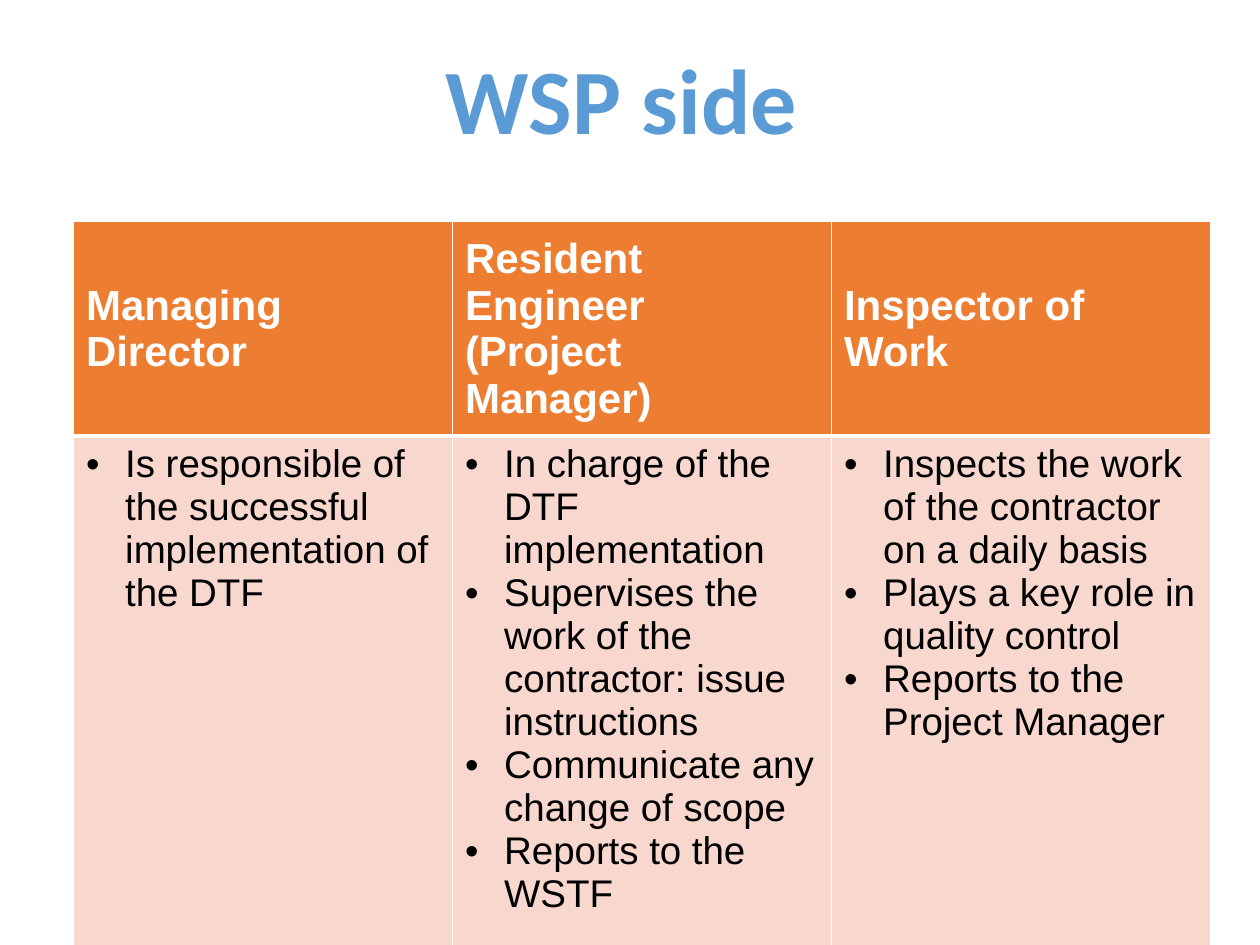
from dataclasses import dataclass

from lxml.etree import SubElement as Sub
from pptx import Presentation
from pptx.dml.color import RGBColor as Rgb
from pptx.enum.text import MSO_ANCHOR as Anchor, PP_ALIGN as Align
from pptx.oxml.ns import qn
from pptx.util import Cm, Pt


@dataclass(frozen=True)
class Theme:
    blue: str = "5B9BD5"
    orange: str = "ED7D31"
    pink: str = "F8D7CE"
    white: str = "FFFFFF"
    black: str = "000000"
    head: str = "Calibri"
    body: str = "Arial"
    big: float = 52.6
    mid: float = 24
    small: float = 22


class Deck:
    def __init__(self, theme):
        self.theme = theme
        self.prs = Presentation()
        self.prs.slide_width, self.prs.slide_height = Cm(25.4), Cm(19.05)
        self.slide = self.prs.slides.add_slide(self.prs.slide_layouts[6])

    def style(self, para, name, size, color, bold):
        font = para.font
        font.name, font.size, font.bold = name, Pt(size), bold
        font.color.rgb = Rgb.from_string(color)

    def title(self, text, left, top, width, height):
        box = self.slide.shapes.add_textbox(
            Cm(left), Cm(top), Cm(width), Cm(height))
        frame = box.text_frame
        frame.word_wrap = True
        frame.vertical_anchor = Anchor.TOP
        frame.margin_top = Cm(0.3)
        para = frame.paragraphs[0]
        para.text, para.alignment, para.line_spacing = text, Align.CENTER, 0.9
        self.style(para, self.theme.head, self.theme.big, self.theme.blue, True)

    def bullet(self, para):
        props = para._p.get_or_add_pPr()
        props.set("marL", str(Cm(0.79)))
        props.set("indent", str(-Cm(0.79)))
        Sub(props, qn("a:buFont"), typeface=self.theme.body)
        Sub(props, qn("a:buChar"), char="•")

    def border(self, cell, **widths):
        props = cell._tc.get_or_add_tcPr()
        for side, width in widths.items():
            line = Sub(props, qn(f"a:ln{side}"), w=str(Pt(width)))
            fill = Sub(line, qn("a:solidFill"))
            Sub(fill, qn("a:srgbClr"), val=self.theme.white)

    def cell(self, cell, lines, head):
        look = self.theme
        # The rule between header and body is the thick one
        self.border(cell, L=1, R=1, T=1 if head else 3, B=3 if head else 1)
        cell.fill.solid()
        cell.fill.fore_color.rgb = Rgb.from_string(
            look.orange if head else look.pink)
        cell.vertical_anchor = Anchor.MIDDLE if head else Anchor.TOP
        frame = cell.text_frame
        frame.text = "\n".join(lines)
        for para in frame.paragraphs:
            if head:
                self.style(para, look.body, look.mid, look.white, True)
            else:
                self.bullet(para)
                self.style(para, look.body, look.small, look.black, False)

    def table(self, roles, left, top, width, heights):
        frame = self.slide.shapes.add_table(
            2, len(roles), Cm(left), Cm(top), Cm(width), Cm(sum(heights)))
        table = frame.table
        table.horz_banding = False
        for row, height in zip(table.rows, heights):
            row.height = Cm(height)
        for col, (name, duties) in enumerate(roles):
            self.cell(table.cell(0, col), name, True)
            self.cell(table.cell(1, col), duties, False)

    def save(self):
        self.prs.save("out.pptx")


# Each role: header lines, then duties
ROLES = [
    (["Managing Director"],
     ["Is responsible of the successful implementation of the DTF"]),
    (["Resident Engineer", "(Project Manager)"],
     ["In charge of the DTF implementation",
      "Supervises the work of the contractor: issue instructions",
      "Communicate any change of scope",
      "Reports to the WSTF"]),
    (["Inspector of Work"],
     ["Inspects the work of the contractor on a daily basis",
      "Plays a key role in quality control",
      "Reports to the Project Manager"]),
]


def main():
    deck = Deck(Theme())
    # Title
    deck.title("WSP side", 0.64, 0.81, 23.77, 4.67)
    # Roles and duties
    deck.table(ROLES, 1.48, 4.47, 22.92, (2.41, 5.92))
    deck.save()


if __name__ == "__main__":
    main()
